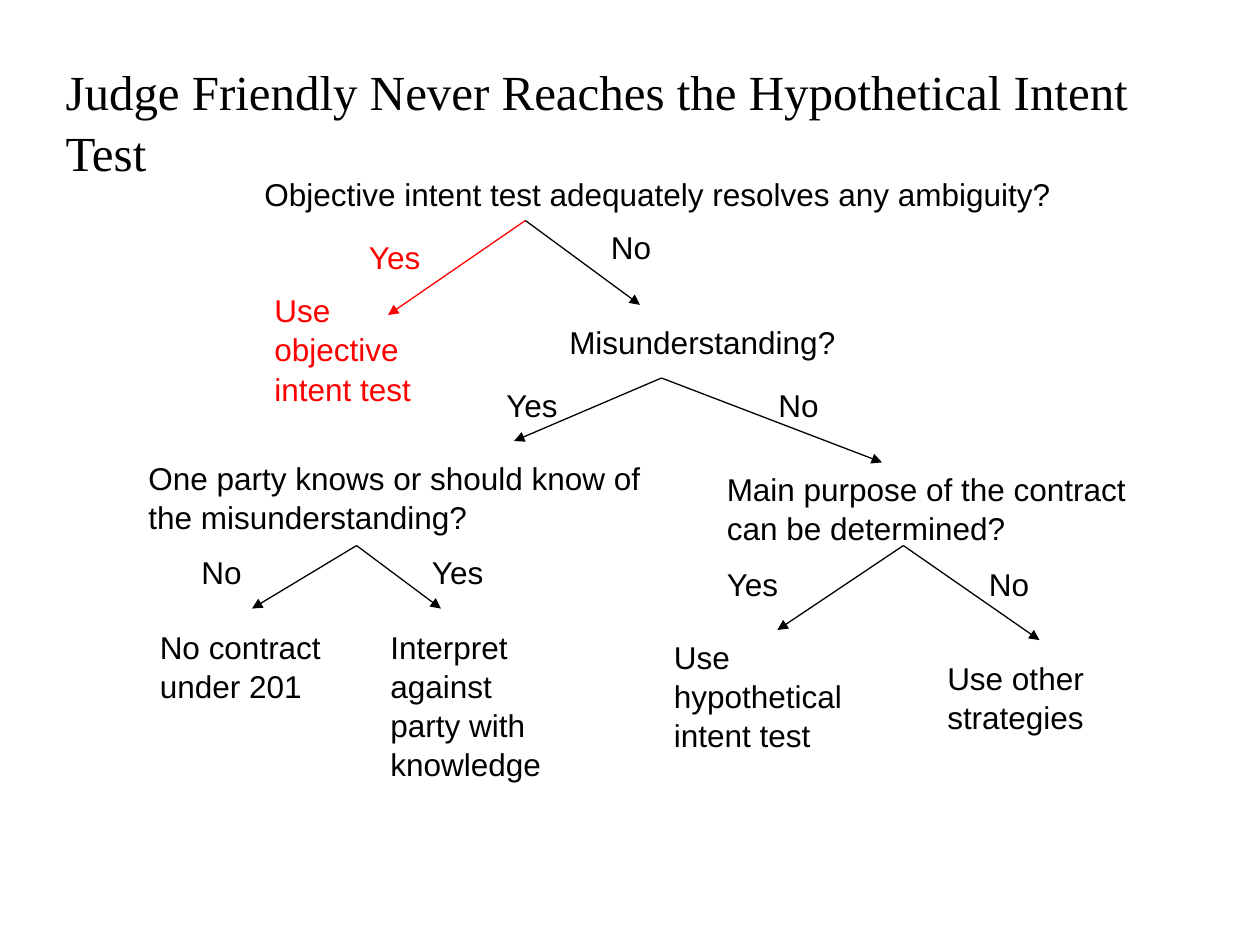
"""Builds the decision tree slide on the hypothetical intent test."""
from lxml.etree import SubElement
from pptx import Presentation
from pptx.dml.color import RGBColor
from pptx.enum.shapes import MSO_CONNECTOR as Connector
from pptx.enum.text import MSO_ANCHOR as Anchor, MSO_AUTO_SIZE as AutoSize, PP_ALIGN as Align
from pptx.oxml.ns import qn
from pptx.util import Inches, Pt

COLOURS = {"text": "000000", "chosen": "FF0000"}

QUESTIONS = [
    ("Objective intent test adequately resolves any ambiguity?", (2, 1.33, 6.92, 0.4)),
    ("Misunderstanding?", (4.42, 2.5, 2.67, 0.4)),
    ("One party knows or should know of the misunderstanding?", (1.08, 3.58, 4.17, 0.7)),
    ("Main purpose of the contract can be determined?", (5.67, 3.67, 3.5, 0.7)),
]

OUTCOMES = [
    ("Use objective intent test", (2.08, 2.25, 1.67, 1), "chosen"),
    ("No contract under 201", (1.17, 4.92, 1.5, 0.7), "text"),
    ("Interpret against party with knowledge", (3, 4.92, 1.5, 1.3), "text"),
    ("Use hypothetical intent test", (5.25, 5, 1.83, 1), "text"),
    ("Use other strategies", (7.42, 5.17, 1.5, 0.7), "text"),
]

FORKS = [
    ((4.17, 1.75), [("Yes", (2.83, 1.83, 1, 0.4), (3.08, 2.5), "chosen"),
                    ("No", (4.75, 1.75, 0.67, 0.4), (5.08, 2.42), "text")]),
    ((5.25, 3), [("Yes", (3.92, 3, 1, 0.4), (4.08, 3.5), "text"),
                 ("No", (6.08, 3, 0.67, 0.4), (7, 3.67), "text")]),
    ((2.83, 4.33), [("No", (1.5, 4.33, 1, 0.4), (2, 4.83), "text"),
                    ("Yes", (3.33, 4.33, 1, 0.4), (3.5, 4.83), "text")]),
    ((7.17, 4.33), [("Yes", (5.67, 4.42, 1, 0.4), (6.17, 5), "text"),
                    ("No", (7.75, 4.42, 0.67, 0.4), (8.25, 5.08), "text")]),
]


class TreeSlide:
    """Holds the style and the current slide of a decision tree."""

    title_font, title_size = "Times New Roman", 28
    node_font, node_size = "Arial", 18
    line_spacing = 1.04

    def __init__(self, deck):
        self.slide = deck.slides.add_slide(deck.slide_layouts[5])

    def fill_text(self, frame, wording, font_name, size, colour):
        frame.word_wrap = True
        frame.auto_size = AutoSize.SHAPE_TO_FIT_TEXT
        frame.vertical_anchor = Anchor.TOP
        paragraph = frame.paragraphs[0]
        paragraph.alignment = Align.LEFT
        paragraph.line_spacing = self.line_spacing
        run = paragraph.add_run()
        run.text = wording
        run.font.name = font_name
        run.font.size = Pt(size)
        run.font.color.rgb = RGBColor.from_string(COLOURS[colour])

    def title(self, wording, box):
        heading = self.slide.shapes.title
        heading.left, heading.top, heading.width, heading.height = map(Inches, box)
        self.fill_text(heading.text_frame, wording, self.title_font, self.title_size, "text")

    def node(self, wording, box, colour="text"):
        label = self.slide.shapes.add_textbox(*map(Inches, box))
        self.fill_text(label.text_frame, wording, self.node_font, self.node_size, colour)

    def arrow(self, start, tip, colour):
        branch = self.slide.shapes.add_connector(
            Connector.STRAIGHT, *map(Inches, (*start, *tip)))
        branch.line.color.rgb = RGBColor.from_string(COLOURS[colour])
        branch.line.width = Pt(0.75)
        properties = branch.line._get_or_add_ln()
        SubElement(properties, qn("a:tailEnd"), type="triangle")
        SubElement(properties.getparent(), qn("a:effectLst"))


def main():
    deck = Presentation()
    deck.slide_width, deck.slide_height = Inches(10), Inches(7.5)
    tree = TreeSlide(deck)
    tree.title("Judge Friendly Never Reaches the Hypothetical Intent Test",
               (0.42, 0.42, 9.17, 0.57))
    for question, box in QUESTIONS:
        tree.node(question, box)
    for outcome, box, colour in OUTCOMES:
        tree.node(outcome, box, colour)
    for apex, answers in FORKS:
        for answer, box, tip, colour in answers:
            tree.arrow(apex, tip, colour)
            tree.node(answer, box, colour)
    deck.save("out.pptx")


if __name__ == "__main__":
    main()
